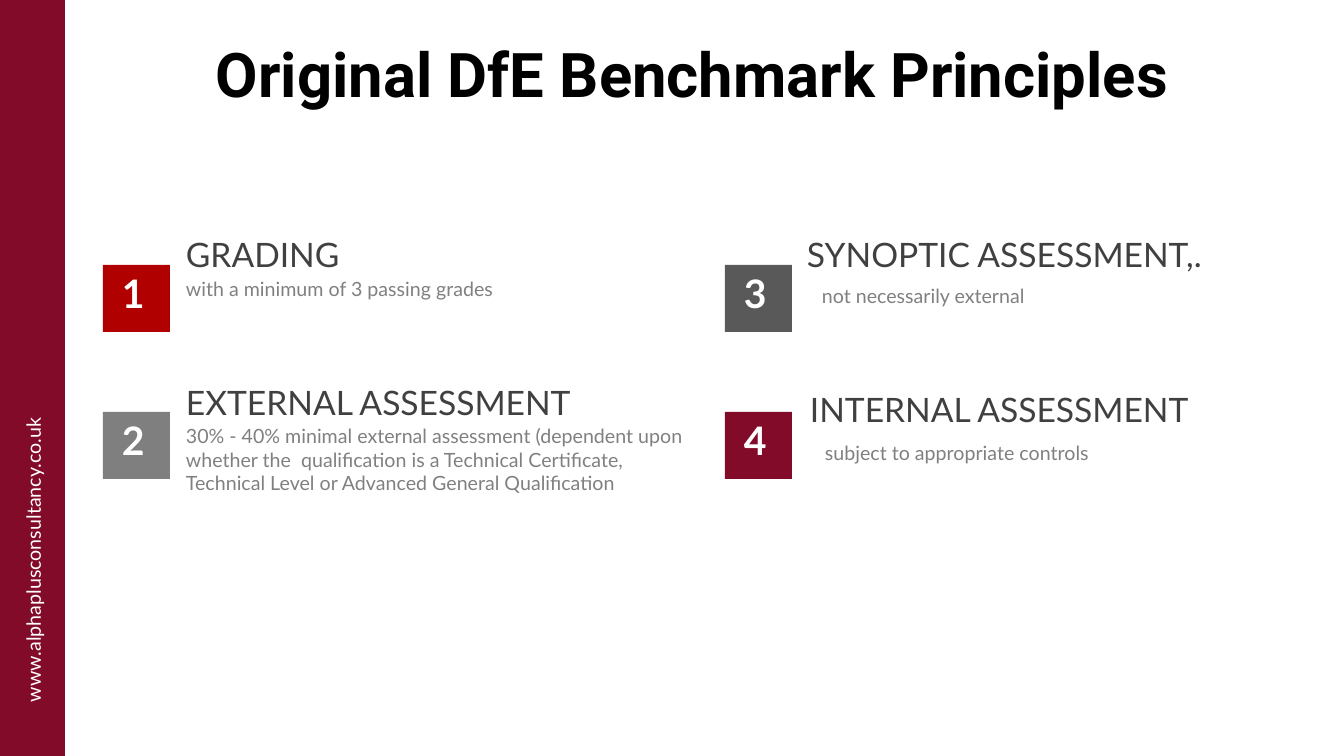
from pptx import Presentation
from pptx.dml.color import RGBColor
from pptx.enum.shapes import MSO_SHAPE
from pptx.enum.text import MSO_ANCHOR, PP_ALIGN
from pptx.util import Emu, Pt

RECTANGLE = MSO_SHAPE.RECTANGLE
TOP, MIDDLE = MSO_ANCHOR.TOP, MSO_ANCHOR.MIDDLE
LEFT, CENTER = PP_ALIGN.LEFT, PP_ALIGN.CENTER

BLACK = RGBColor(0x00, 0x00, 0x00)
WHITE = RGBColor(0xFF, 0xFF, 0xFF)
MAROON = RGBColor(0x81, 0x0B, 0x29)
RED = RGBColor(0xB0, 0x00, 0x00)
MID_GREY = RGBColor(0x7F, 0x7F, 0x7F)
DARK_GREY = RGBColor(0x59, 0x59, 0x59)
HEADING_GREY = RGBColor(0x40, 0x40, 0x40)
DETAIL_GREY = RGBColor(0x80, 0x80, 0x80)

TITLE = "Original DfE Benchmark Principles"
WEBSITE = "www.alphaplusconsultancy.co.uk"
# Offsets run from the top left corner of each numbered square.
PRINCIPLES = [
    {"heading": "GRADING", "heading_offset": (73, -36),
     "detail": "with a minimum of 3 passing grades",
     "detail_offset": (73, 7), "detail_height": 34, "color": RED},
    {"heading": "EXTERNAL ASSESSMENT", "heading_offset": (73, -35),
     "detail": "30% - 40% minimal external assessment (dependent upon "
               "whether the  qualification is a Technical Certificate, "
               "Technical Level or Advanced General Qualification",
     "detail_offset": (73, 7), "detail_height": 82, "color": MID_GREY},
    {"heading": "SYNOPTIC ASSESSMENT,.", "heading_offset": (72, -36),
     "detail": "not necessarily external",
     "detail_offset": (87, 14), "detail_height": 34, "color": DARK_GREY},
    {"heading": "INTERNAL ASSESSMENT", "heading_offset": (75, -28),
     "detail": "subject to appropriate controls",
     "detail_offset": (90, 24), "detail_height": 34, "color": MAROON},
]

PAGE_WIDTH, PAGE_HEIGHT = 1344, 756
SIDEBAR_WIDTH = 65
GRID_LEFT, GRID_TOP = 103, 265
COLUMN_PITCH, ROW_PITCH, ROWS = 622, 147, 2
SQUARE = 67
HEADING_WIDTH, HEADING_HEIGHT = 460, 55
DETAIL_WIDTH = 523


def px(length):
    return Emu(round(length * 914400 / 100.8))


def write(shape, text, size, color, font="Lato", bold=False, align=LEFT, anchor=TOP):
    frame = shape.text_frame
    frame.word_wrap = True
    frame.vertical_anchor = anchor
    para = frame.paragraphs[0]
    para.text = text
    para.alignment = align
    para.font.name = font
    para.font.size = Pt(size)
    para.font.bold = bold
    para.font.color.rgb = color
    return frame


def add_text(page, left, top, width, height, text, size, color, **style):
    box = page.shapes.add_textbox(px(left), px(top), px(width), px(height))
    write(box, text, size, color, **style)
    return box


def add_block(page, left, top, width, height, color):
    block = page.shapes.add_shape(RECTANGLE, px(left), px(top), px(width), px(height))
    block.shadow.inherit = False
    block.fill.solid()
    block.fill.fore_color.rgb = color
    block.line.fill.background()
    return block


def add_principle(page, index, principle):
    column, row = divmod(index, ROWS)
    left = GRID_LEFT + column * COLUMN_PITCH
    top = GRID_TOP + row * ROW_PITCH
    square = add_block(page, left, top, SQUARE, SQUARE, principle["color"])
    frame = write(square, str(index + 1), 28, WHITE, bold=True)
    frame.margin_left, frame.margin_top = px(19), px(4)

    across, down = principle["heading_offset"]
    add_text(page, left + across, top + down, HEADING_WIDTH, HEADING_HEIGHT,
             principle["heading"], 24, HEADING_GREY)
    across, down = principle["detail_offset"]
    add_text(page, left + across, top + down, DETAIL_WIDTH, principle["detail_height"],
             principle["detail"], 14, DETAIL_GREY)


def main():
    deck = Presentation()
    deck.slide_width, deck.slide_height = px(PAGE_WIDTH), px(PAGE_HEIGHT)
    page = deck.slides.add_slide(deck.slide_layouts[5])

    title = page.shapes.title
    title.left, title.top, title.width, title.height = px(103), px(32), px(1179), px(91)
    write(title, TITLE, 44, BLACK, font="Roboto", bold=True, align=CENTER, anchor=MIDDLE)
    title.text_frame.paragraphs[0].line_spacing = 0.9

    add_block(page, 0, 0, SIDEBAR_WIDTH, PAGE_HEIGHT, MAROON)
    website = add_text(page, -130, 540, 326, 40, WEBSITE, 14, WHITE,
                       align=CENTER, anchor=MIDDLE)
    website.rotation = 270

    for index, principle in enumerate(PRINCIPLES):
        add_principle(page, index, principle)

    deck.save("out.pptx")


if __name__ == "__main__":
    main()
